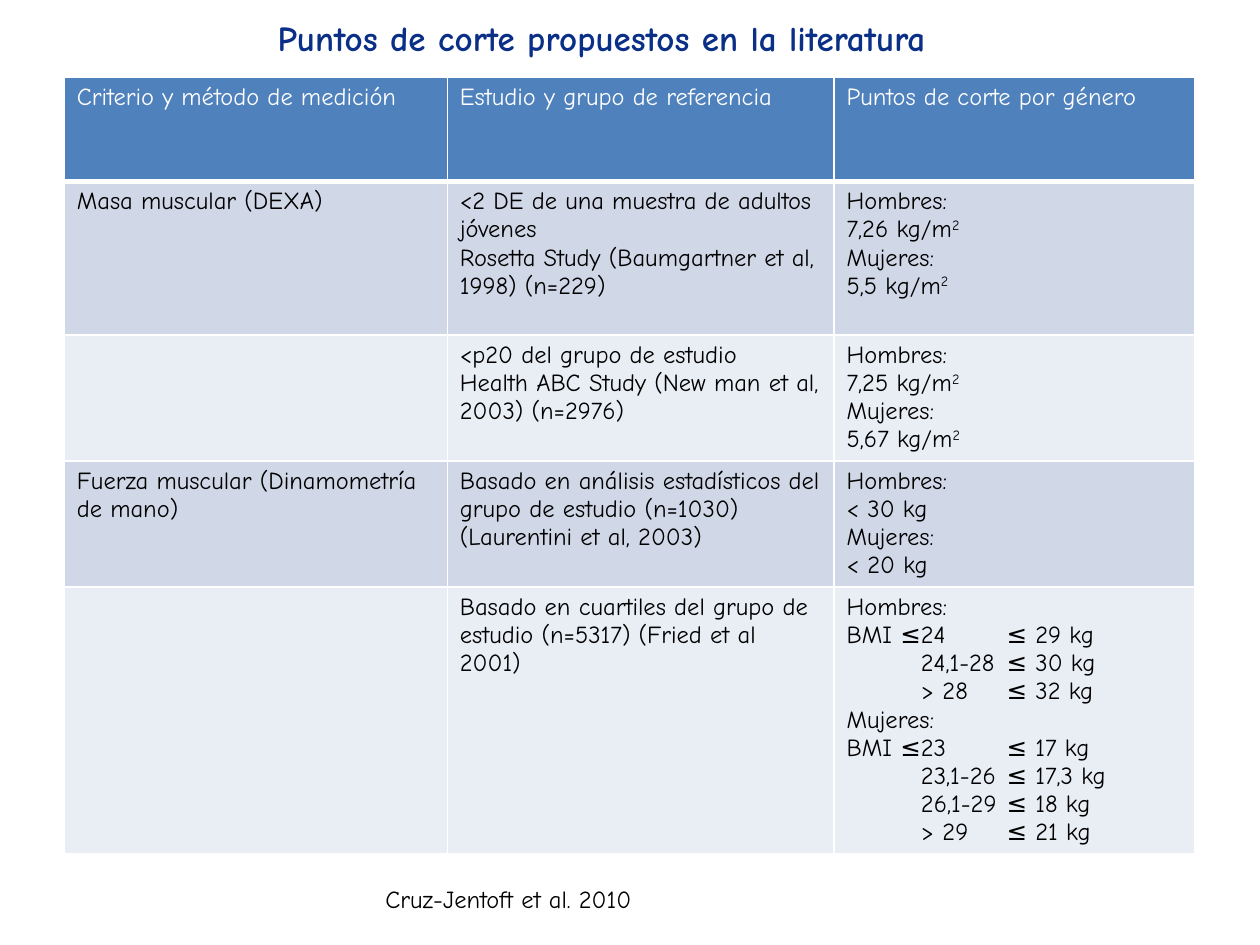
from lxml.etree import SubElement
from pptx import Presentation
from pptx.dml.color import RGBColor
from pptx.enum.text import MSO_ANCHOR, MSO_AUTO_SIZE, PP_ALIGN
from pptx.oxml.ns import qn
from pptx.util import Inches, Pt

WHITE, BLACK, NAVY = "FFFFFF", "000000", "0A2F87"
HEADER_FILL, BAND_FILLS = "4F81BD", ("D0D8E8", "E9EDF4")


def style(font, size, color, bold=False):
    font.name = "Comic Neue"
    font.size = Pt(size)
    font.bold = bold
    font.color.rgb = RGBColor.from_string(color)


def add_border(cell, side, position, width):
    properties = cell._tc.get_or_add_tcPr()
    line = SubElement(properties, qn(f"a:ln{side}"), w=str(Pt(width)))
    fill = SubElement(line, qn("a:solidFill"))
    SubElement(fill, qn("a:srgbClr"), val=WHITE)
    properties.insert(position, line)


prs = Presentation()
prs.slide_width, prs.slide_height = Inches(10), Inches(7.5)
slide = prs.slides.add_slide(prs.slide_layouts[5])

# Title
title = slide.shapes.title
title.left, title.top = Inches(0.67), Inches(0.08)
title.width, title.height = Inches(8.21), Inches(0.71)
title.text_frame.text = "Puntos de corte propuestos en la literatura"
title.text_frame.vertical_anchor = MSO_ANCHOR.TOP
title.text_frame.auto_size = MSO_AUTO_SIZE.NONE
title_line = title.text_frame.paragraphs[0]
title_line.alignment = PP_ALIGN.CENTER
style(title_line.runs[0].font, 20, NAVY, bold=True)

# Cut-off points: "^" marks a superscript, tabs align the BMI ranges
cutoffs = [
    ["Criterio y método de medición", "Estudio y grupo de referencia",
     "Puntos de corte por género"],
    ["Masa muscular (DEXA)",
     "<2 DE de una muestra de adultos jóvenes\n"
     "Rosetta Study (Baumgartner et al, 1998) (n=229)",
     "Hombres:\n7,26 kg/m^2\nMujeres:\n5,5 kg/m^2"],
    ["",
     "<p20 del grupo de estudio\n"
     "Health ABC Study (New man et al, 2003) (n=2976)",
     "Hombres:\n7,25 kg/m^2\nMujeres:\n5,67 kg/m^2"],
    ["Fuerza muscular (Dinamometría de mano)",
     "Basado en análisis estadísticos del grupo de estudio (n=1030) "
     "(Laurentini et al, 2003)",
     "Hombres:\n< 30 kg\nMujeres:\n< 20 kg"],
    ["",
     "Basado en cuartiles del grupo de estudio (n=5317) (Fried et al 2001)",
     "Hombres:\nBMI ≤24\t≤ 29 kg\n\t24,1-28\t≤ 30 kg\n\t> 28\t≤ 32 kg\n"
     "Mujeres:\nBMI ≤23\t≤ 17 kg\n\t23,1-26\t≤ 17,3 kg\n"
     "\t26,1-29\t≤ 18 kg\n\t> 29\t≤ 21 kg"],
]
column_widths = [3.04, 3.07, 2.86]
row_heights = [0.83, 1.22, 1, 1, 2.11]
tab_stops = [0.59, 1.27]

# Table
table = slide.shapes.add_table(
    len(row_heights), len(column_widths), Inches(0.51), Inches(0.61),
    Inches(sum(column_widths)), Inches(sum(row_heights))).table
for column, width in zip(table.columns, column_widths):
    column.width = Inches(width)
for row, height in zip(table.rows, row_heights):
    row.height = Inches(height)

for r, row_texts in enumerate(cutoffs):
    fill_color = BAND_FILLS[(r - 1) % 2] if r else HEADER_FILL
    text_color = BLACK if r else WHITE
    for c, text in enumerate(row_texts):
        cell = table.cell(r, c)
        cell.fill.solid()
        cell.fill.fore_color.rgb = RGBColor.from_string(fill_color)
        for position, side in enumerate("LRTB"):
            header_edge = (r, side) in ((0, "B"), (1, "T"))
            add_border(cell, side, position, 3 if header_edge else 1)

        cell.text_frame.text = text
        for paragraph in cell.text_frame.paragraphs:
            base, _, superscript = paragraph.text.partition("^")
            if "\t" in base:
                # Lines that start with BMI need only the last stop
                stops = tab_stops if base.startswith("\t") else tab_stops[1:]
                tabs = SubElement(paragraph._p.get_or_add_pPr(), qn("a:tabLst"))
                for stop in stops:
                    SubElement(tabs, qn("a:tab"), pos=str(Inches(stop)), algn="l")
            if superscript:
                paragraph.text = base
                raised = paragraph.add_run()
                raised.text = superscript
                raised.font._element.set("baseline", "30000")
            for run in paragraph.runs:
                style(run.font, 14, text_color)

# Source
source = slide.shapes.add_textbox(Inches(2.96), Inches(6.97), Inches(2.3), Inches(0.35))
source.text_frame.text = "Cruz-Jentoft et al. 2010"
source.text_frame.word_wrap = True
style(source.text_frame.paragraphs[0].runs[0].font, 14, BLACK)

prs.save("out.pptx")
